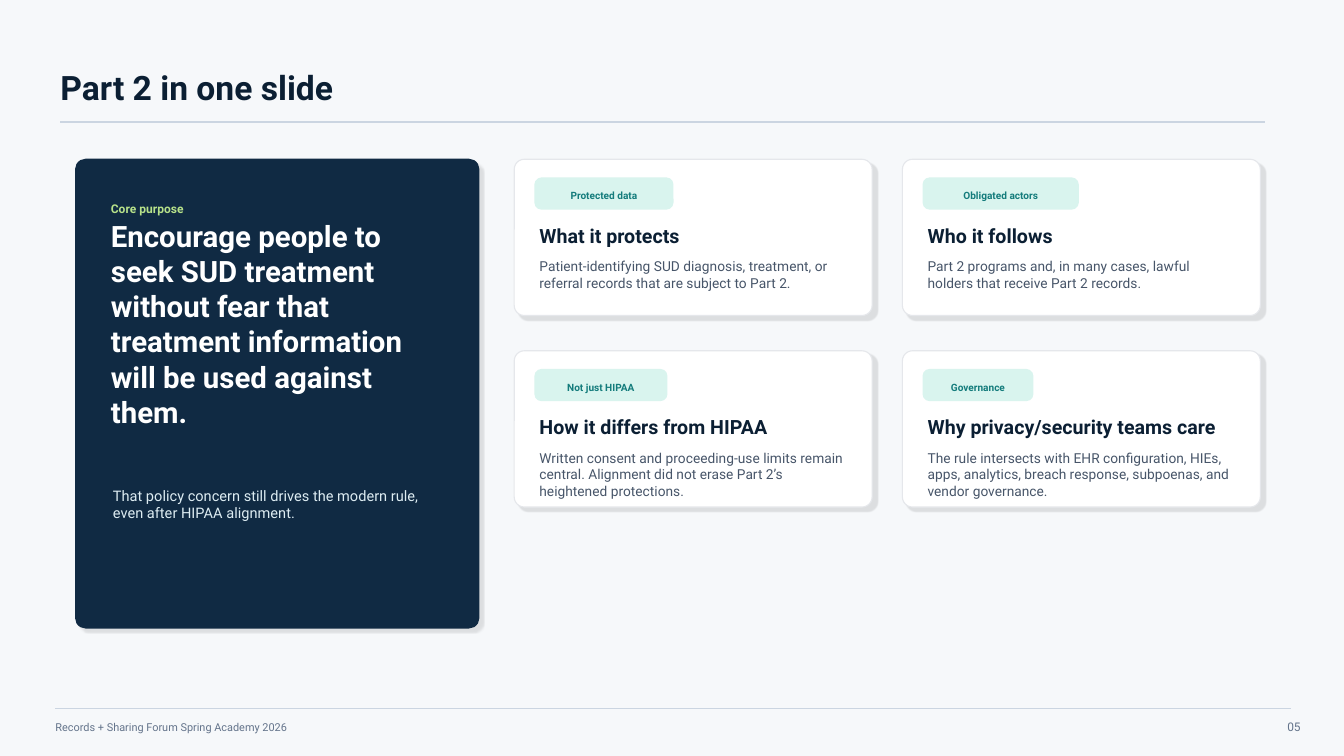
from lxml import etree
from pptx import Presentation
from pptx import util as u
from pptx.dml.color import RGBColor
from pptx.enum import shapes, text
from pptx.oxml import ns

TITLE = "Part 2 in one slide"
FOOTER = "Records + Sharing Forum Spring Academy 2026"
PAGE = "05"
LABEL = "Core purpose"
QUOTE = ("Encourage people to seek SUD treatment without fear that "
         "treatment information will be used against them.")
NOTE = "That policy concern still drives the modern rule, even after HIPAA alignment."
CARDS = [
    ("Protected data", 1.38, "What it protects",
     "Patient-identifying SUD diagnosis, treatment, or referral records "
     "that are subject to Part 2."),
    ("Obligated actors", 1.55, "Who it follows",
     "Part 2 programs and, in many cases, lawful holders that receive Part 2 records."),
    ("Not just HIPAA", 1.32, "How it differs from HIPAA",
     "Written consent and proceeding-use limits remain central. "
     "Alignment did not erase Part 2’s heightened protections."),
    ("Governance", 1.1, "Why privacy/security teams care",
     "The rule intersects with EHR configuration, HIEs, apps, analytics, "
     "breach response, subpoenas, and vendor governance."),
]

FONT = "Roboto"
PAPER = RGBColor(0xF6, 0xF8, 0xFA)
INK = RGBColor(0x0B, 0x1F, 0x33)
NAVY = RGBColor(0x10, 0x2A, 0x43)
RULE = RGBColor(0xCB, 0xD5, 0xE1)
GREY = RGBColor(0x64, 0x74, 0x8B)
SLATE = RGBColor(0x47, 0x55, 0x69)
LIME = RGBColor(0xB7, 0xE2, 0x8A)
ICE = RGBColor(0xDD, 0xEC, 0xF2)
WHITE = RGBColor(0xFF, 0xFF, 0xFF)
EDGE = RGBColor(0xE5, 0xE7, 0xEB)
MINT = RGBColor(0xD9, 0xF4, 0xEE)
TEAL = RGBColor(0x14, 0x7C, 0x7C)

LEFT = text.PP_ALIGN.LEFT
RIGHT = text.PP_ALIGN.RIGHT
MID = text.PP_ALIGN.CENTER
TOP = text.MSO_ANCHOR.TOP
CENTER = text.MSO_ANCHOR.MIDDLE

TOP_Y = 1.58
CARD_X, CARD_W, CARD_H = 5.1, 3.55, 1.55
STEP_X, STEP_Y = 3.85, 1.9

deck = Presentation()
deck.slide_width, deck.slide_height = u.Inches(13.33), u.Inches(7.5)
slide = deck.slides.add_slide(deck.slide_layouts[6])
slide.background.fill.solid()
slide.background.fill.fore_color.rgb = PAPER


def write(words, x, y, w, h, size=10, color=INK, bold=False, align=LEFT, anchor=CENTER):
    box = slide.shapes.add_textbox(*map(u.Inches, (x, y, w, h)))
    frame = box.text_frame
    frame.word_wrap = True
    frame.vertical_anchor = anchor
    frame.margin_left = frame.margin_right = frame.margin_top = frame.margin_bottom = 0
    para = frame.paragraphs[0]
    para.alignment = align
    run = para.add_run()
    run.text = words
    run.font.name, run.font.size = FONT, u.Pt(size)
    run.font.bold, run.font.color.rgb = bold, color


def rule(x, y, end, width):
    line = slide.shapes.add_connector(
        shapes.MSO_CONNECTOR.STRAIGHT, *map(u.Inches, (x, y, end, y)))
    line.line.color.rgb, line.line.width = RULE, u.Pt(width)
    etree.SubElement(line._element.spPr, ns.qn("a:effectLst"))


def panel(x, y, w, h, round_by, fill, edge=None):
    box = slide.shapes.add_shape(
        shapes.MSO_SHAPE.ROUNDED_RECTANGLE, *map(u.Inches, (x, y, w, h)))
    box.adjustments[0] = round_by
    box.fill.solid()
    box.fill.fore_color.rgb = fill
    box.shadow.inherit = False
    if edge is None:
        box.line.fill.background()
        return
    box.line.color.rgb, box.line.width = edge, u.Pt(0.8)
    glow = box._element.spPr.find(ns.qn("a:effectLst"))
    shade = etree.SubElement(
        glow, ns.qn("a:outerShdw"), blurRad=str(u.Pt(1)), dist=str(u.Pt(4)),
        dir=str(45 * 60000), algn="tl", rotWithShape="0")
    tint = etree.SubElement(shade, ns.qn("a:srgbClr"), val="000000")
    etree.SubElement(tint, ns.qn("a:alpha"), val="10000")


def card(x, y, tag, tag_w, head, body):
    panel(x, y, CARD_W, CARD_H, 0.065, WHITE, EDGE)
    panel(x + 0.2, y + 0.18, tag_w, 0.32, 0.219, MINT)
    write(tag, x + 0.28, y + 0.25, tag_w - 0.16, 0.22,
          size=7.2, color=TEAL, bold=True, align=MID)
    write(head, x + 0.25, y + 0.58, 3.05, 0.35, size=14, bold=True)
    write(body, x + 0.25, y + 0.98, 3.05, 0.45, size=9.8, color=SLATE, anchor=TOP)


write(TITLE, 0.6, 0.58, 12, 0.56, size=24, bold=True)
rule(0.6, 1.21, 12.55, 0.8)
rule(0.55, 7.03, 12.8, 0.75)
write(FOOTER, 0.55, 7.1, 5, 0.22, size=7.8, color=GREY)
write(PAGE, 12.15, 7.08, 0.75, 0.25, size=8.5, color=GREY, align=RIGHT)

panel(0.75, TOP_Y, 4, 4.65, 0.025, NAVY, NAVY)
write(LABEL, 1.1, 1.96, 2.5, 0.22, size=8.6, color=LIME, bold=True)
write(QUOTE, 1.1, 2.42, 3.25, 1.58, size=21, color=WHITE, bold=True)
write(NOTE, 1.12, 4.74, 3.05, 0.52, size=10.4, color=ICE)

for i, item in enumerate(CARDS):
    row, col = divmod(i, 2)
    card(CARD_X + col * STEP_X, TOP_Y + row * STEP_Y, *item)

deck.save("out.pptx")
